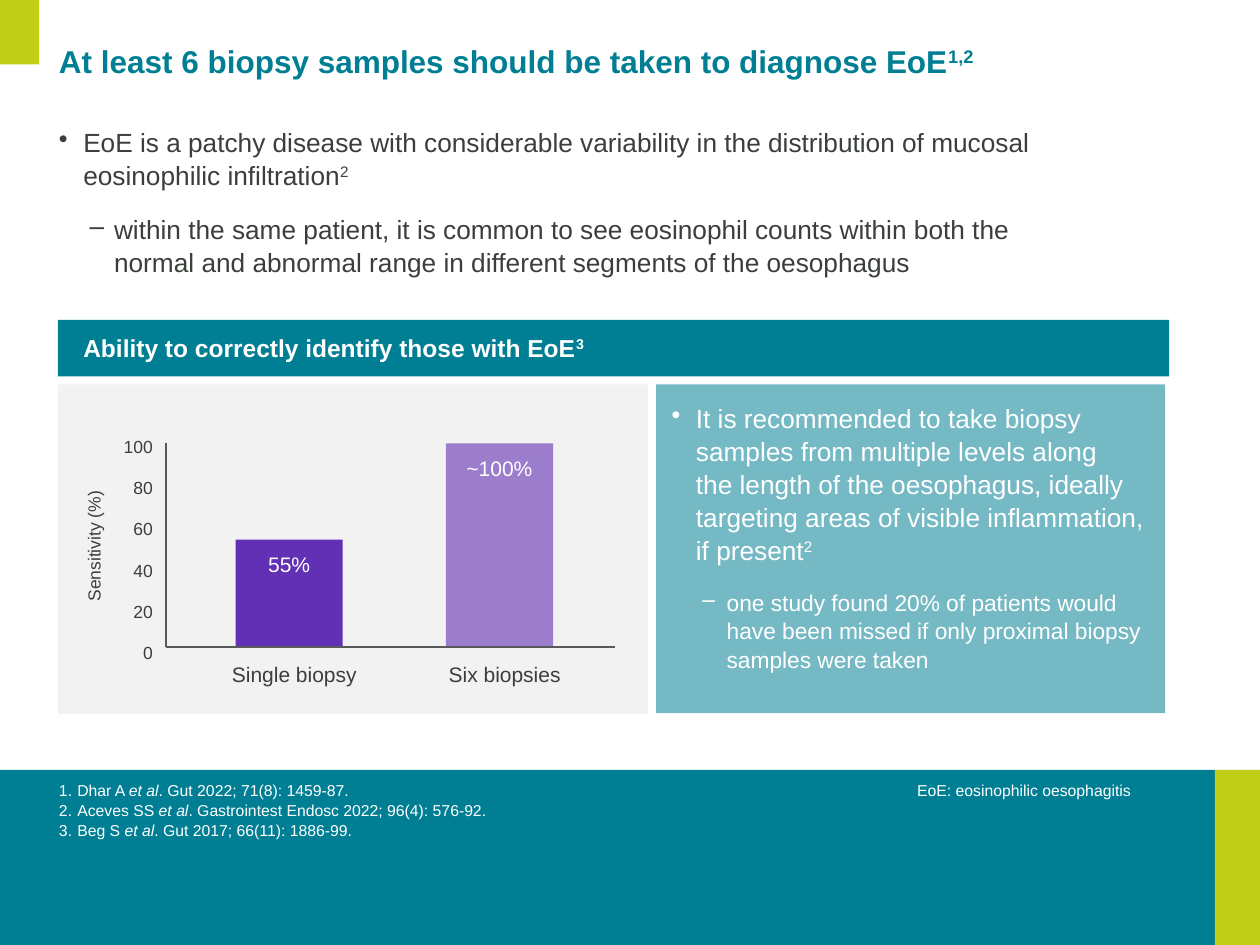
from lxml.etree import SubElement as Sub
from pptx import Presentation
from pptx.dml.color import RGBColor as RGB
from pptx.enum.shapes import MSO_CONNECTOR as Link, MSO_SHAPE as Shape
from pptx.enum.text import PP_ALIGN as Align
from pptx.oxml.ns import qn
from pptx.util import Cm, Pt

HUES = {"teal": "007E93", "lime": "C0CF15", "ink": "3A3F3A", "white": "FFFFFF",
        "pale": "F2F2F2", "violet": "6130B4", "axis": "585958"}

# Bullet formats: tag, its attributes, left margin and hang in cm
DOT = ("a:buChar", {"char": "•"}, 0.49, 0.49)
DASH = ("a:buChar", {"char": "–"}, 1.11, 0.49)
NUM = ("a:buAutoNum", {"type": "arabicPeriod"}, 0.37, 0.37)

deck = Presentation()
deck.slide_width, deck.slide_height = Cm(25.4), Cm(19.05)
slide = deck.slides.add_slide(deck.slide_layouts[6])


def block(left, top, width, height, hue, alpha=None):
    """Add a plain rectangle, with alpha as percent opacity."""
    rect = slide.shapes.add_shape(Shape.RECTANGLE, Cm(left), Cm(top), Cm(width), Cm(height))
    rect.shadow.inherit = False
    rect.line.fill.background()
    rect.fill.solid()
    rect.fill.fore_color.rgb = RGB.from_string(HUES[hue])
    if alpha:
        tint = rect.fill._xPr.find(".//" + qn("a:srgbClr"))
        Sub(tint, qn("a:alpha"), val=str(alpha * 1000))


def text(left, top, width, height, paras, hue="ink", size=12, bold=False,
         align=Align.LEFT, after=0, gap=0, ratio=1.05, inset=(0, 0)):
    """Add text; a para is (bullet, size, pieces), ^ marks superscript, _ italic."""
    box = slide.shapes.add_textbox(Cm(left), Cm(top), Cm(width), Cm(height))
    frame = box.text_frame
    edges = {"word_wrap": True, "margin_left": 0, "margin_bottom": 0,
             "margin_top": Cm(inset[0]), "margin_right": Cm(inset[1])}
    for key, val in edges.items():
        setattr(frame, key, val)
    for row, (mark, own, parts) in enumerate(paras):
        para = frame.add_paragraph() if row else frame.paragraphs[0]
        form = {"alignment": align, "line_spacing": ratio, "space_after": Pt(after),
                "space_before": Pt(gap if row else 0)}
        for key, val in form.items():
            setattr(para, key, val)
        if mark:
            tag, attrs, left_in, hang = mark
            props = para._p.get_or_add_pPr()
            props.set("marL", str(Cm(left_in)))
            props.set("indent", str(-Cm(hang)))
            Sub(props, qn(tag), attrs)
        for part in parts:
            if part == "\n":
                para.add_line_break()
                continue
            run = para.add_run()
            run.text = part.lstrip("^_")
            look = {"name": "Arial", "size": Pt(own or size), "bold": bold,
                    "italic": part.startswith("_")}
            for key, val in look.items():
                setattr(run.font, key, val)
            run.font.color.rgb = RGB.from_string(HUES[hue])
            if part.startswith("^"):
                run._r.get_or_add_rPr().set("baseline", "30000")
    return box


# Frame of the page
block(0, 15.52, 24.49, 3.53, "teal")
block(24.49, 15.52, 0.91, 3.53, "lime")
block(0, 0, 0.79, 1.3, "lime")

# Title and main points
text(1.19, 0.46, 20.4, 1.98,
     [(None, None, ["At least 6 biopsy samples should be taken to diagnose EoE", "^1,2"])],
     "teal", 18, True, ratio=1.5)
text(1.19, 2.51, 20.4, 3.53, [
    (DOT, None, ["EoE is a patchy disease with considerable variability in the "
                 "distribution of mucosal eosinophilic infiltration", "^2"]),
    (DASH, None, ["within the same patient, it is common to see eosinophil counts within "
                  "both the normal and abnormal range in different segments of the "
                  "oesophagus"])], size=15, gap=12)

# Footer: abbreviation and references
text(18.49, 15.52, 5.97, 3.53, [(None, None, ["EoE: eosinophilic oesophagitis"])],
     "white", 9, inset=(0.2, 0.3))
refs = [("Dhar A ", ". Gut 2022; 71(8): 1459-87."),
        ("Aceves SS ", ". Gastrointest Endosc 2022; 96(4): 576-92."),
        ("Beg S ", ". Gut 2017; 66(11): 1886-99.")]
text(1.19, 15.52, 16.54, 3.53,
     [(NUM, None, [who, "_et al", where]) for who, where in refs],
     "white", 9, inset=(0.2, 0.3))

# Bar panel: scale and axis name
block(1.17, 7.75, 11.89, 6.65, "pale")
name = text(-0.08, 10.69, 4.11, 0.64, [(None, None, ["Sensitivity (%)"])],
            size=10, align=Align.CENTER)
name.rotation = 270
text(2.29, 8.76, 0.79, 4.57, [(None, None, [str(n)]) for n in range(100, -1, -20)],
     size=10, align=Align.RIGHT, after=11)

# Bars with their values and labels
base = 13.05
bars = [("Single biopsy", "55%", 4.75, 2.17, None),
        ("Six biopsies", "~100%", 8.99, 4.11, 60)]
for label, value, left, tall, alpha in bars:
    block(left, base - tall, 2.16, tall, "violet", alpha)
    text(left, base - tall + 0.21, 2.16, 0.84, [(None, None, [value])],
         "white", align=Align.CENTER)
    text(left - 0.48, 13.31, 3.33, 0.64, [(None, None, [label])], align=Align.CENTER)

# Axes
for ends in [(3.35, 8.94, 3.35, base), (12.4, base, 3.35, base)]:
    axis = slide.shapes.add_connector(Link.STRAIGHT, *map(Cm, ends))
    axis.line.color.rgb = RGB.from_string(HUES["axis"])
    axis.line.width = Pt(1)
    Sub(axis._element.spPr, qn("a:effectLst"))

# Header band and advice panel
block(13.23, 7.75, 10.26, 6.63, "teal", 54)
block(1.17, 6.45, 22.4, 1.14, "teal")
text(1.68, 6.68, 10.74, 0.86,
     [(None, None, ["Ability to correctly identify those with EoE", "^3"])],
     "white", 14, True)
text(13.54, 8.08, 9.6, 5.64, [
    (DOT, None, ["It is recommended to take biopsy samples from multiple levels along",
                 "\n", "the length of the oesophagus, ideally targeting areas of visible "
                 "inflammation, if present", "^2"]),
    (DASH, 13, ["one study found 20% of patients would have been missed if only "
                "proximal biopsy samples were taken"])], "white", 15, gap=12)

deck.save("out.pptx")
